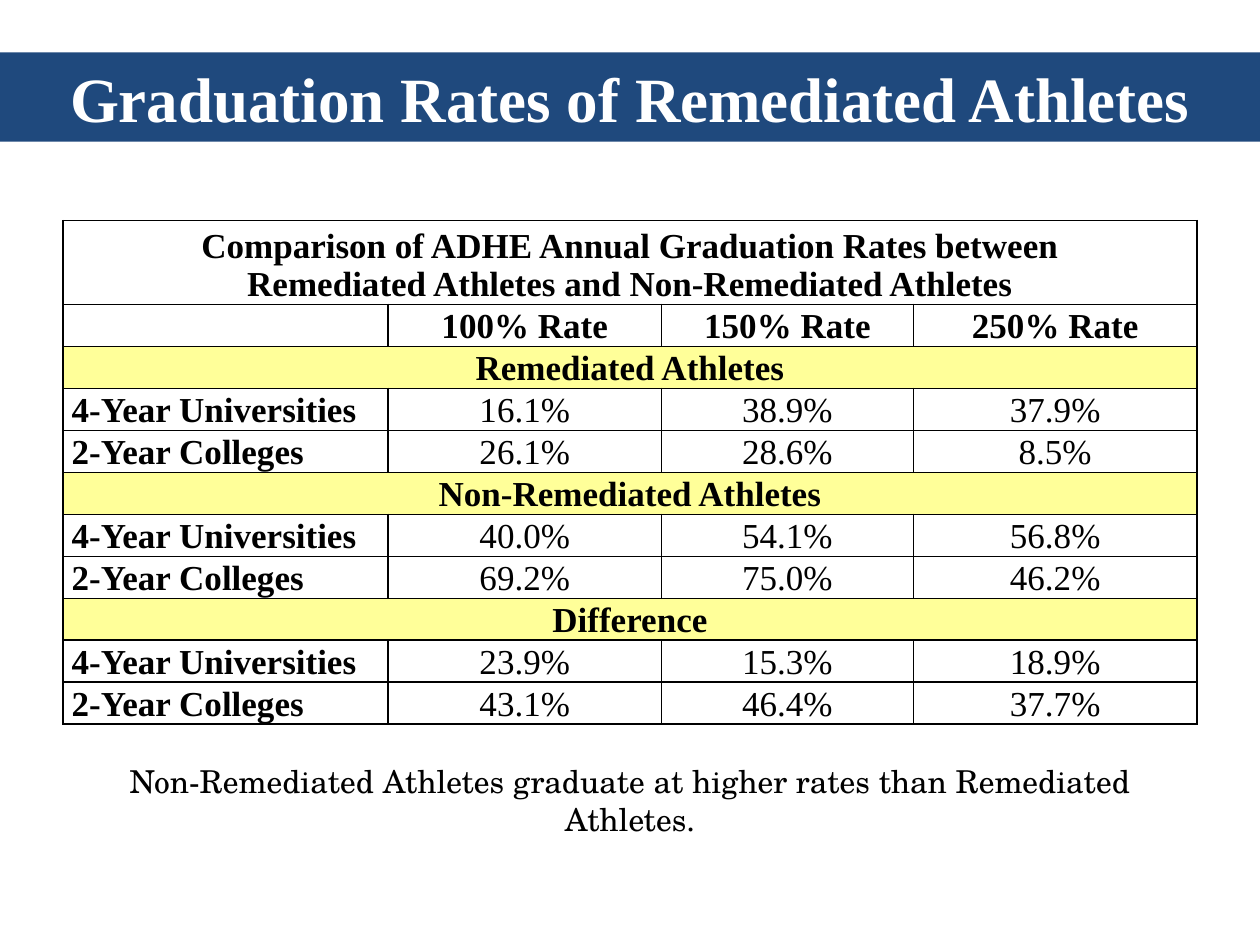
from lxml import etree
from pptx import Presentation
from pptx import util as u
from pptx.dml.color import RGBColor
from pptx.enum import text
from pptx.oxml import ns

NAVY = RGBColor(0x1F, 0x49, 0x7D)
YELLOW = RGBColor(0xFF, 0xFF, 0x99)
BLACK = RGBColor(0, 0, 0)
WHITE = RGBColor(0xFF, 0xFF, 0xFF)

COLUMN_WIDTHS = [185.76, 156.24, 144, 162]
HEADING_HEIGHT, ROW_HEIGHT = 48, 24
# A row with a single entry spans the whole table.
ROWS = [
    ["Comparison of ADHE Annual Graduation Rates between\n"
     "Remediated Athletes and Non-Remediated Athletes"],
    ["", "100% Rate", "150% Rate", "250% Rate"],
    ["Remediated Athletes"],
    ["4-Year Universities", "16.1%", "38.9%", "37.9%"],
    ["2-Year Colleges", "26.1%", "28.6%", "8.5%"],
    ["Non-Remediated Athletes"],
    ["4-Year Universities", "40.0%", "54.1%", "56.8%"],
    ["2-Year Colleges", "69.2%", "75.0%", "46.2%"],
    ["Difference"],
    ["4-Year Universities", "23.9%", "15.3%", "18.9%"],
    ["2-Year Colleges", "43.1%", "46.4%", "37.7%"],
]


class SlideBuilder:
    serif = "Times New Roman"
    note_font = "TeX Gyre Schola"

    def __init__(self, slide):
        self.slide = slide

    def format_text(self, frame, font, size, color, bold=False,
                    alignment=text.PP_ALIGN.CENTER):
        for paragraph in frame.paragraphs:
            paragraph.alignment = alignment
            for run in paragraph.runs:
                run.font.name = font
                run.font.size = u.Pt(size)
                run.font.bold = bold
                run.font.color.rgb = color

    def title(self, words, left, top, width, height):
        shape = self.slide.shapes.title
        shape.left, shape.top = u.Pt(left), u.Pt(top)
        shape.width, shape.height = u.Pt(width), u.Pt(height)
        shape.fill.solid()
        shape.fill.fore_color.rgb = NAVY
        frame = shape.text_frame
        frame.text = words
        frame.auto_size = text.MSO_AUTO_SIZE.NONE
        frame.vertical_anchor = text.MSO_ANCHOR.MIDDLE
        self.format_text(frame, self.serif, 36, WHITE, bold=True)

    def note(self, words, left, top, width, height):
        box = self.slide.shapes.add_textbox(
            u.Pt(left), u.Pt(top), u.Pt(width), u.Pt(height))
        frame = box.text_frame
        frame.word_wrap = True
        frame.text = words
        self.format_text(frame, self.note_font, 18, BLACK)

    def cell_borders(self, cell):
        properties = cell._tc.get_or_add_tcPr()
        for side in ("a:lnL", "a:lnR", "a:lnT", "a:lnB"):
            line = etree.SubElement(properties, ns.qn(side), w=str(u.Pt(1)))
            fill = etree.SubElement(line, ns.qn("a:solidFill"))
            etree.SubElement(fill, ns.qn("a:srgbClr"), val=str(BLACK))

    def table(self, rows, left, top):
        heights = [HEADING_HEIGHT] + [ROW_HEIGHT] * (len(rows) - 1)
        table = self.slide.shapes.add_table(
            len(rows), len(COLUMN_WIDTHS), u.Pt(left), u.Pt(top),
            u.Pt(sum(COLUMN_WIDTHS)), u.Pt(sum(heights))).table
        table.first_row = table.horz_banding = False
        for column, width in zip(table.columns, COLUMN_WIDTHS):
            column.width = u.Pt(width)
        for row_index, (entries, height) in enumerate(zip(rows, heights)):
            row = table.rows[row_index]
            row.height = u.Pt(height)
            spans = len(entries) == 1
            for column_index, cell in enumerate(row.cells):
                cell.margin_left = cell.margin_right = u.Pt(5)
                cell.margin_top = cell.margin_bottom = 0
                cell.vertical_anchor = text.MSO_ANCHOR.BOTTOM
                self.cell_borders(cell)
                if spans and row_index > 0:
                    cell.fill.solid()
                    cell.fill.fore_color.rgb = YELLOW
                else:
                    cell.fill.background()
                if column_index >= len(entries):
                    continue
                cell.text_frame.text = entries[column_index]
                is_label = column_index == 0 and not spans
                self.format_text(
                    cell.text_frame, self.serif, 20, BLACK,
                    bold=column_index == 0 or row_index == 1,
                    alignment=text.PP_ALIGN.LEFT if is_label
                    else text.PP_ALIGN.CENTER)
            if spans:
                row.cells[0].merge(table.cell(row_index, len(COLUMN_WIDTHS) - 1))


def main():
    presentation = Presentation()
    presentation.slide_width, presentation.slide_height = u.Pt(720), u.Pt(540)
    title_only = presentation.slide_layouts[5]
    builder = SlideBuilder(presentation.slides.add_slide(title_only))
    builder.title("Graduation Rates of Remediated Athletes", 0, 30, 720, 51)
    builder.table(ROWS, 36, 126)
    builder.note("Non-Remediated Athletes graduate at higher rates than "
                 "Remediated Athletes.", 42, 432, 636, 29)
    presentation.save("out.pptx")


if __name__ == "__main__":
    main()
